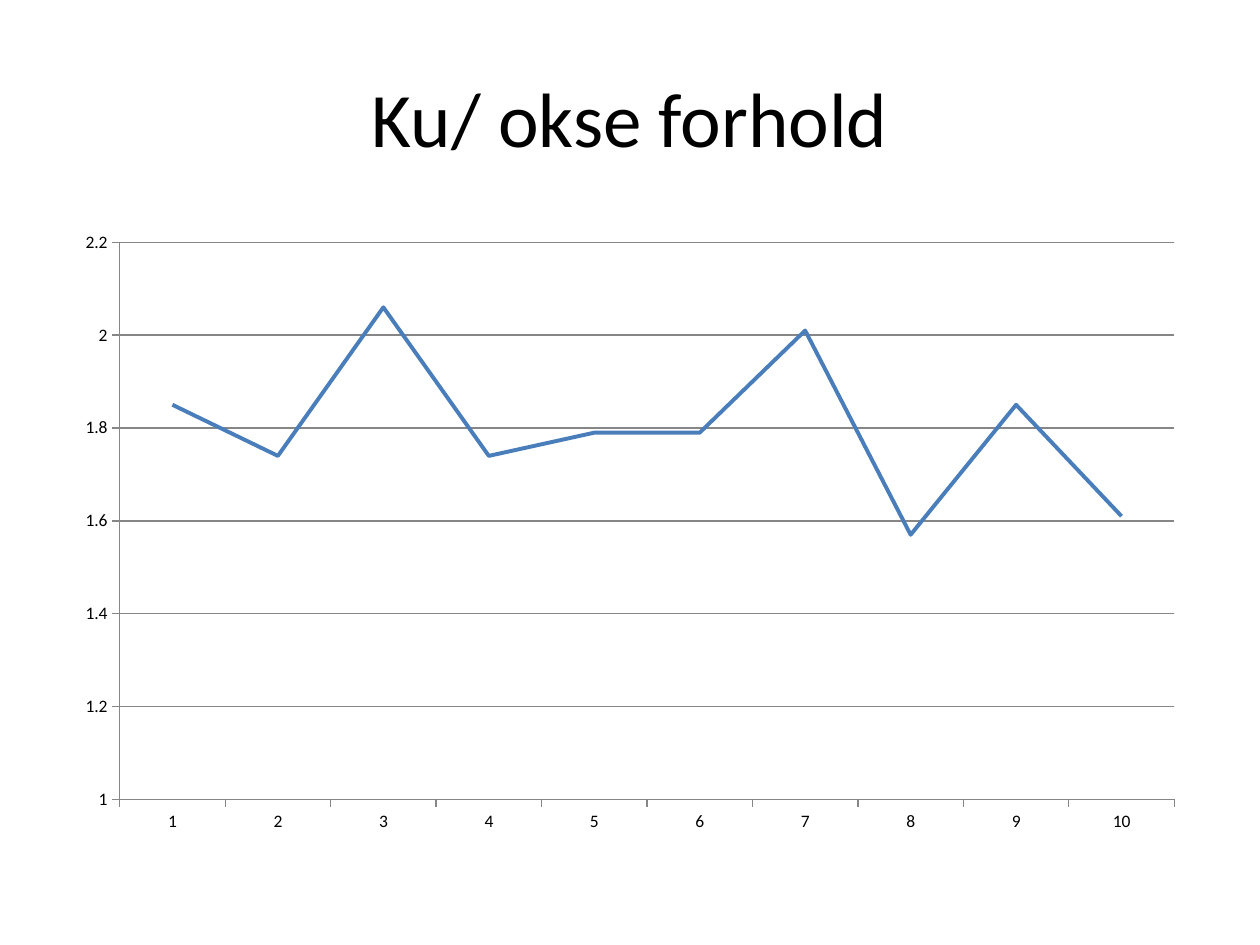
from pptx import Presentation
from pptx.chart.data import CategoryChartData as ChartData
from pptx.dml.color import RGBColor
from pptx.enum.chart import XL_CHART_TYPE as Kind, XL_TICK_MARK as Tick
from pptx.enum.text import MSO_ANCHOR as Anchor, PP_ALIGN as Align
from pptx.util import Emu, Pt

BLACK = RGBColor(0x00, 0x00, 0x00)
GRAY = RGBColor(0x86, 0x86, 0x86)
BLUE = RGBColor(0x4A, 0x7E, 0xBB)
FONT = "Calibri"
RATIOS = [1.85, 1.74, 2.06, 1.74, 1.79, 1.79, 2.01, 1.57, 1.85, 1.61]


def px(n):
    return Emu(round(n * 914400 / 126))


def style(font, size):
    font.name = FONT
    font.size = Pt(size)
    font.color.rgb = BLACK


def rule(line, color, width):
    line.color.rgb = color
    line.width = Pt(width)


def add_title(slide, text, *box):
    frame = slide.shapes.add_textbox(*map(px, box)).text_frame
    frame.word_wrap = True
    frame.vertical_anchor = Anchor.MIDDLE
    frame.text = text
    para = frame.paragraphs[0]
    para.alignment = Align.CENTER
    style(para.runs[0].font, 44)


def add_lines(slide, values, *box):
    data = ChartData(number_format="General")
    data.categories = [str(n) for n in range(1, len(values) + 1)]
    data.add_series("Series 1", values)
    chart = slide.shapes.add_chart(Kind.LINE, *map(px, box), data).chart
    chart.has_title = False
    chart.has_legend = False
    style(chart.font, 10)
    for axis in (chart.category_axis, chart.value_axis):
        axis.major_tick_mark = Tick.OUTSIDE
        axis.minor_tick_mark = Tick.NONE
        rule(axis.format.line, GRAY, 0.75)
    scale = chart.value_axis
    scale.minimum_scale = 1
    scale.maximum_scale = 2.2
    scale.major_unit = 0.2
    scale.has_major_gridlines = True
    rule(scale.major_gridlines.format.line, GRAY, 0.75)
    chart.plots[0].vary_by_categories = False
    series = chart.plots[0].series[0]
    series.smooth = False
    rule(series.format.line, BLUE, 2.25)


def main():
    deck = Presentation()
    deck.slide_width, deck.slide_height = px(1260), px(945)
    slide = deck.slides.add_slide(deck.slide_layouts[6])
    add_title(slide, "Ku/ okse forhold", 63, 38, 1134, 157)
    add_lines(slide, RATIOS, 63, 220, 1134, 624)
    deck.save("out.pptx")


if __name__ == "__main__":
    main()
